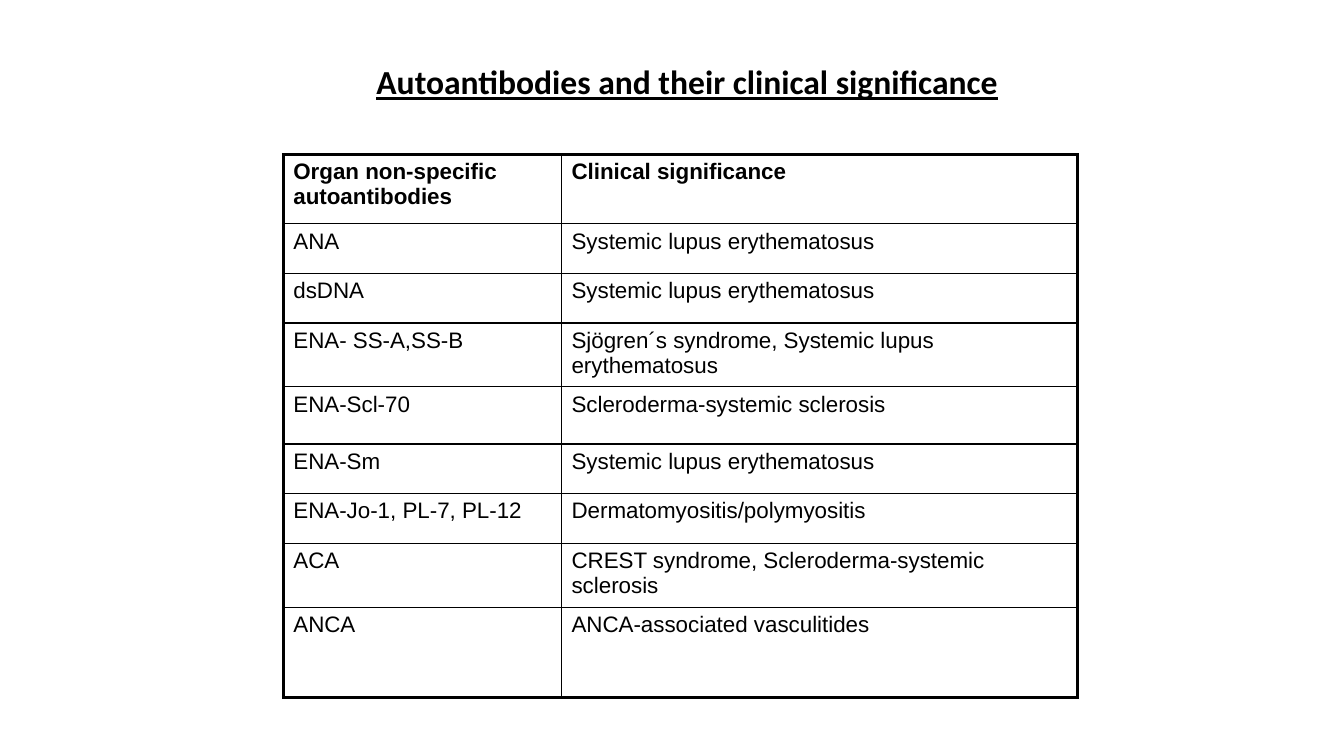
from lxml.etree import SubElement
from pptx import Presentation
from pptx.dml.color import RGBColor
from pptx.enum.text import PP_ALIGN as Align
from pptx.oxml.ns import qn
from pptx.util import Cm, Pt

BLACK = RGBColor(0x00, 0x00, 0x00)
THIN, THICK = Pt(1), Pt(2.25)

TITLE = "Autoantibodies and their clinical significance"
COLUMN_WIDTHS = (7.01, 13.0)
ROW_HEIGHTS = (1.75, 1.25, 1.25, 1.6, 1.44, 1.25, 1.25, 1.45, 2.28)
ROWS = (
    ("Organ non-specific autoantibodies", "Clinical significance"),
    ("ANA", "Systemic lupus erythematosus"),
    ("dsDNA", "Systemic lupus erythematosus"),
    ("ENA- SS-A,SS-B", "Sjögren´s syndrome, Systemic lupus erythematosus"),
    ("ENA-Scl-70", "Scleroderma-systemic sclerosis"),
    ("ENA-Sm", "Systemic lupus erythematosus"),
    ("ENA-Jo-1, PL-7, PL-12", "Dermatomyositis/polymyositis"),
    ("ACA", "CREST syndrome, Scleroderma-systemic sclerosis"),
    ("ANCA", "ANCA-associated vasculitides"),
)


class SlideBuilder:
    """Adds styled elements to the current slide."""

    title_font = {"name": "Calibri", "size": Pt(24), "bold": True, "underline": True}
    title_layout = {"alignment": Align.CENTER, "line_spacing": 1.5, "space_before": Pt(10)}
    cell_font = {"name": "Arial", "size": Pt(16)}

    def __init__(self, slide):
        self.slide = slide

    def add_text(self, paragraph, text, font_format):
        run = paragraph.add_run()
        run.text = text
        for name, value in font_format.items():
            setattr(run.font, name, value)
        run.font.color.rgb = BLACK

    def add_title(self, text, left, top, width, height):
        shape = self.slide.shapes.add_textbox(Cm(left), Cm(top), Cm(width), Cm(height))
        shape.text_frame.word_wrap = True
        paragraph = shape.text_frame.paragraphs[0]
        for name, value in self.title_layout.items():
            setattr(paragraph, name, value)
        self.add_text(paragraph, text, self.title_font)

    def add_border(self, cell, side, width):
        properties = cell._tc.get_or_add_tcPr()
        line = SubElement(properties, qn(f"a:ln{side}"), w=str(width))
        fill = SubElement(line, qn("a:solidFill"))
        SubElement(fill, qn("a:srgbClr"), val=str(BLACK))

    def add_table(self, rows, left, top, column_widths, row_heights):
        shape = self.slide.shapes.add_table(
            len(rows), len(column_widths), Cm(left), Cm(top),
            Cm(sum(column_widths)), Cm(sum(row_heights)))
        table = shape.table
        table.first_row = table.horz_banding = False
        for column, width in zip(table.columns, column_widths):
            column.width = Cm(width)
        last_row, last_column = len(rows) - 1, len(column_widths) - 1
        for row_index, (texts, height) in enumerate(zip(rows, row_heights)):
            table.rows[row_index].height = Cm(height)
            for column_index, text in enumerate(texts):
                cell = table.cell(row_index, column_index)
                outer_sides = {
                    "L": column_index == 0,
                    "R": column_index == last_column,
                    "T": row_index == 0,
                    "B": row_index == last_row,
                }
                for side, is_outer in outer_sides.items():
                    self.add_border(cell, side, THICK if is_outer else THIN)
                cell.fill.background()
                font_format = {**self.cell_font, "bold": row_index == 0}
                self.add_text(cell.text_frame.paragraphs[0], text, font_format)


def main():
    presentation = Presentation()
    presentation.slide_width, presentation.slide_height = Cm(33.87), Cm(19.05)
    builder = SlideBuilder(presentation.slides.add_slide(presentation.slide_layouts[6]))
    builder.add_title(TITLE, 6.12, 0.91, 22.4, 16.99)
    builder.add_table(ROWS, 7.14, 3.89, COLUMN_WIDTHS, ROW_HEIGHTS)
    presentation.save("out.pptx")


if __name__ == "__main__":
    main()
